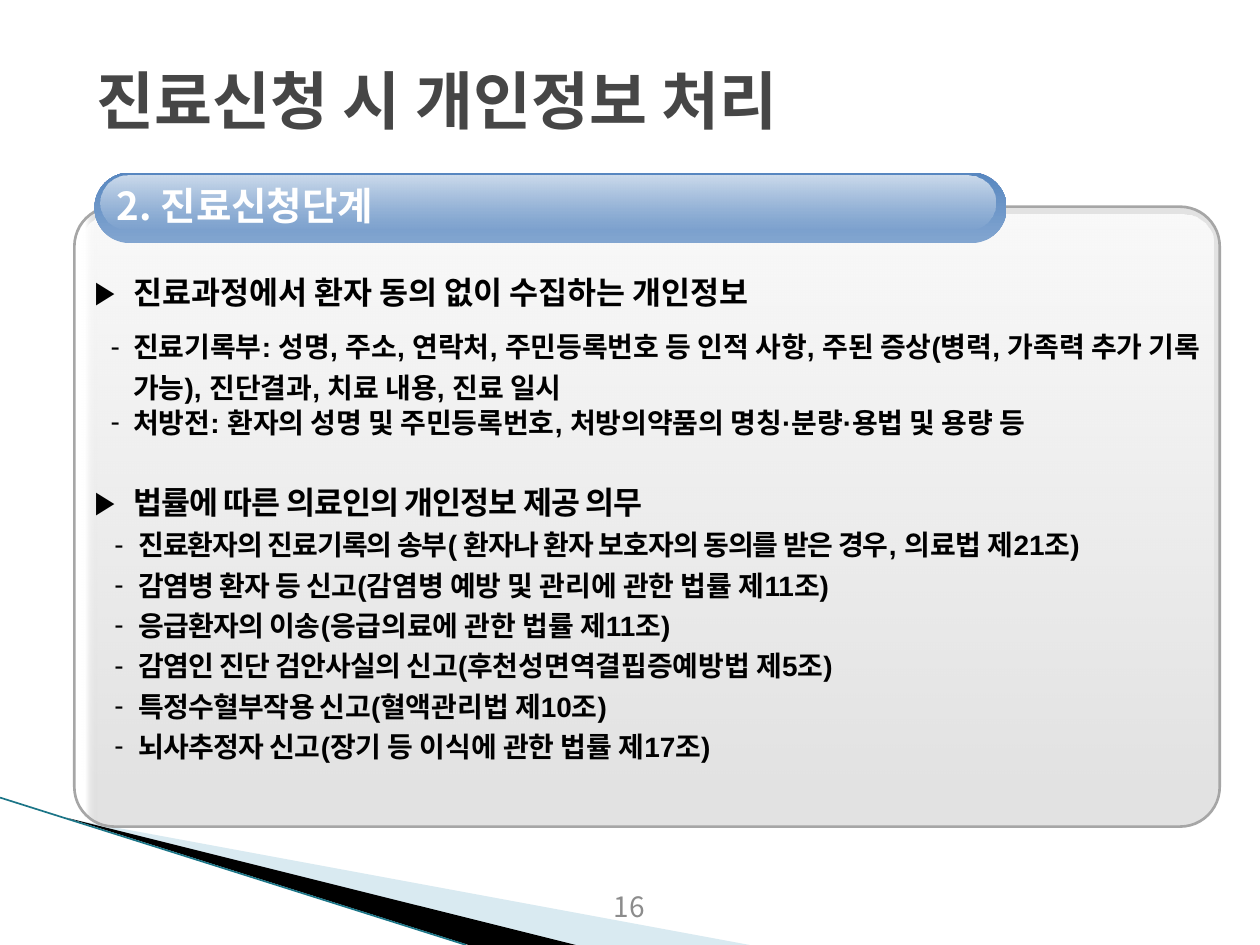
import pptx
import pptx.dml.color
import pptx.enum.shapes
import pptx.enum.text
import pptx.oxml
import pptx.oxml.ns
import pptx.util

COLUMNS, ROWS = 100, 75
COLORS = {
    "black": "000000", "white": "FFFFFF", "title": "464646", "number": "8C8C8C",
    "border": "A6A6A6", "panel": "BFBFBF", "bar_low": "82A5D0", "bar_high": "5887C0",
    "wave": "A0CBDC", "edge": "1B7587",
}
CJK, LATIN = "Noto Sans CJK KR", "Arial"
NAMESPACE = pptx.oxml.ns.nsdecls("a")

HEADING = dict(size=18, bullet="▶", margin=0.31, hang=0.31, line_spacing=1.2)
RECORD = dict(size=16, bullet="-", margin=0.31, hang=0.18)
DUTY = dict(size=16, bullet="-", margin=0.35, hang=0.19, line_spacing=1.2)
DUTIES = [
    ("감염병 환자 등 신고(", "감염병 예방 및 관리에 관한 법률 제11조"),
    ("응급환자의 이송(", "응급의료에 관한 법률 제11조"),
    ("감염인 진단 검안사실의 신고(", "후천성면역결핍증예방법 제5조"),
    ("특정수혈부작용 신고(", "혈액관리법 제10조"),
    ("뇌사추정자 신고(", "장기 등 이식에 관한 법률 제17조"),
]


def rgb(name):
    return pptx.dml.color.RGBColor.from_string(COLORS[name])


def alpha_xml(percent):
    return f'<a:alpha val="{percent * 1000}"/>'


def write_text(paragraph, runs, *, size, color="black", font=LATIN, bold=True,
               bullet=None, margin=0, hang=0, line_spacing=None, before=0, after=0,
               align=None):
    properties = paragraph._p.get_or_add_pPr()
    if bullet:
        properties.set("marL", str(pptx.util.Inches(margin)))
        properties.set("indent", str(-pptx.util.Inches(hang)))
        properties.append(pptx.oxml.parse_xml(f'<a:buFont {NAMESPACE} typeface="{LATIN}"/>'))
        properties.append(pptx.oxml.parse_xml(f'<a:buChar {NAMESPACE} char="{bullet}"/>'))
    paragraph.alignment = align
    paragraph.space_before = pptx.util.Pt(before)
    paragraph.space_after = pptx.util.Pt(after)
    if line_spacing:
        paragraph.line_spacing = line_spacing
    for text, tracking in [(runs, 0)] if isinstance(runs, str) else runs:
        run = paragraph.add_run()
        run.text = text
        run.font.size = pptx.util.Pt(size)
        run.font.bold = bold
        run.font.color.rgb = rgb(color)
        run.font.name = font
        if font == CJK:
            run.font._element.append(
                pptx.oxml.parse_xml(f'<a:ea {NAMESPACE} typeface="{font}"/>'))
        if tracking:
            run.font._element.set("spc", str(round(tracking * 100)))


class SlideBuilder:
    def __init__(self, presentation):
        self.column = presentation.slide_width / COLUMNS
        self.row = presentation.slide_height / ROWS
        self.slide = presentation.slides.add_slide(presentation.slide_layouts[6])

    def place(self, left, top, width, height):
        return [round(value * unit) for value, unit in
                zip((left, top, width, height), (self.column, self.row) * 2)]

    def polygon(self, points, color, opacity=100):
        corners = [(round(x * self.column), round(y * self.row)) for x, y in points]
        builder = self.slide.shapes.build_freeform(*corners[0], scale=1.0)
        builder.add_line_segments(corners[1:], close=True)
        shape = builder.convert_to_shape()
        shape.shadow.inherit = False
        shape.fill.solid()
        shape.fill.fore_color.rgb = rgb(color)
        shape.fill._xPr.find(".//" + pptx.oxml.ns.qn("a:srgbClr")).append(
            pptx.oxml.parse_xml(f'<a:alpha {NAMESPACE} val="{opacity * 1000}"/>'))
        shape.line.fill.background()

    def line(self, start, end, color, width):
        begin_x, begin_y, end_x, end_y = self.place(*start, *end)
        connector = self.slide.shapes.add_connector(
            pptx.enum.shapes.MSO_CONNECTOR.STRAIGHT, begin_x, begin_y, end_x, end_y)
        connector.line.color.rgb = rgb(color)
        connector.line.width = pptx.util.Pt(width)
        connector._element.spPr.append(pptx.oxml.parse_xml(f"<a:effectLst {NAMESPACE}/>"))

    def rounded(self, box, radius, stops, angle, border=None):
        shape = self.slide.shapes.add_shape(
            pptx.enum.shapes.MSO_SHAPE.ROUNDED_RECTANGLE, *self.place(*box))
        shape.adjustments[0] = radius
        shape.shadow.inherit = False
        stop_xml = "".join(
            f'<a:gs pos="{position * 1000}"><a:srgbClr val="{COLORS[color]}">'
            f"{alpha_xml(opacity)}</a:srgbClr></a:gs>"
            for position, color, opacity in stops)
        shape._element.spPr.find(pptx.oxml.ns.qn("a:prstGeom")).addnext(
            pptx.oxml.parse_xml(
                f'<a:gradFill {NAMESPACE} rotWithShape="1"><a:gsLst>{stop_xml}</a:gsLst>'
                f'<a:lin ang="{angle * 60000}" scaled="0"/></a:gradFill>'))
        if border:
            shape.line.color.rgb = rgb(border)
            shape.line.width = pptx.util.Pt(1.5)
        else:
            shape.line.fill.background()

    def text(self, box, paragraphs, middle=False):
        frame = self.slide.shapes.add_textbox(*self.place(*box)).text_frame
        frame.word_wrap = True
        anchors = pptx.enum.text.MSO_ANCHOR
        frame.vertical_anchor = anchors.MIDDLE if middle else anchors.TOP
        for index, (runs, style) in enumerate(paragraphs):
            paragraph = frame.add_paragraph() if index else frame.paragraphs[0]
            write_text(paragraph, runs, **style)


def main():
    presentation = pptx.Presentation()
    presentation.slide_width = pptx.util.Inches(10)
    presentation.slide_height = pptx.util.Inches(7.5)
    builder = SlideBuilder(presentation)

    builder.polygon([(5.5, 65), (59.5, 75), (45.6, 75)], "wave", 40)
    builder.polygon([(5.3, 64.9), (45.7, 75), (37.2, 75)], "black")
    builder.line((0, 63.3), (37, 75), "edge", 0.95)

    builder.rounded((5.9, 16.4, 90.9, 49.2), 0.064,
                    [(1, "white", 100), (2, "panel", 45)], 0, "border")
    builder.rounded((6.5, 17, 89.8, 46.3), 0.051,
                    [(0, "white", 81), (100, "white", 0)], 90)
    duties = [([(name, -0.3), (law, 0), (")", -0.3)], DUTY) for name, law in DUTIES]
    builder.text((6.5, 20.6, 90.7, 41.4), [
        ("진료과정에서 환자 동의 없이 수집하는 개인정보", HEADING | dict(after=1)),
        ("진료기록부: 성명, 주소, 연락처, 주민등록번호 등 인적 사항, 주된 증상(병력, 가족력 "
         "추가 기록 가능), 진단결과, 치료 내용, 진료 일시",
         RECORD | dict(line_spacing=1.2, before=6, after=1)),
        ("처방전: 환자의 성명 및 주민등록번호, 처방의약품의 명칭·분량·용법 및 용량 등", RECORD),
        ([("법률에 따른 의료인의 개인정보 제공 의무", -0.5)], HEADING | dict(before=21)),
        ([("진료환자의 진료기록의 송부( 환자나 환자 보호자의 동의를 받은 경우,", -0.5),
          (" 의료법 제21조", 0), (")", -0.5)], DUTY),
        *duties,
    ])

    builder.rounded((7.5, 13.7, 72.4, 5.6), 0.5,
                    [(0, "bar_low", 100), (100, "bar_high", 100)], 270)
    builder.rounded((8, 13.9, 71, 4.3), 0.5,
                    [(0, "white", 71), (100, "white", 0)], 90)
    builder.text((8.3, 14.8, 69, 3.8), [
        ("2. 진료신청단계", dict(size=22, color="white", font=CJK,
                           line_spacing=pptx.util.Pt(20)))], middle=True)
    builder.text((38.3, 70.1, 23.3, 4), [
        ("16", dict(size=16, color="number", font=CJK, bold=False,
                    align=pptx.enum.text.PP_ALIGN.CENTER))])
    builder.text((6.7, 4.7, 88.4, 6.3), [
        ("진료신청 시 개인정보 처리", dict(size=36, color="title", font=CJK))], middle=True)

    presentation.save("out.pptx")


if __name__ == "__main__":
    main()
